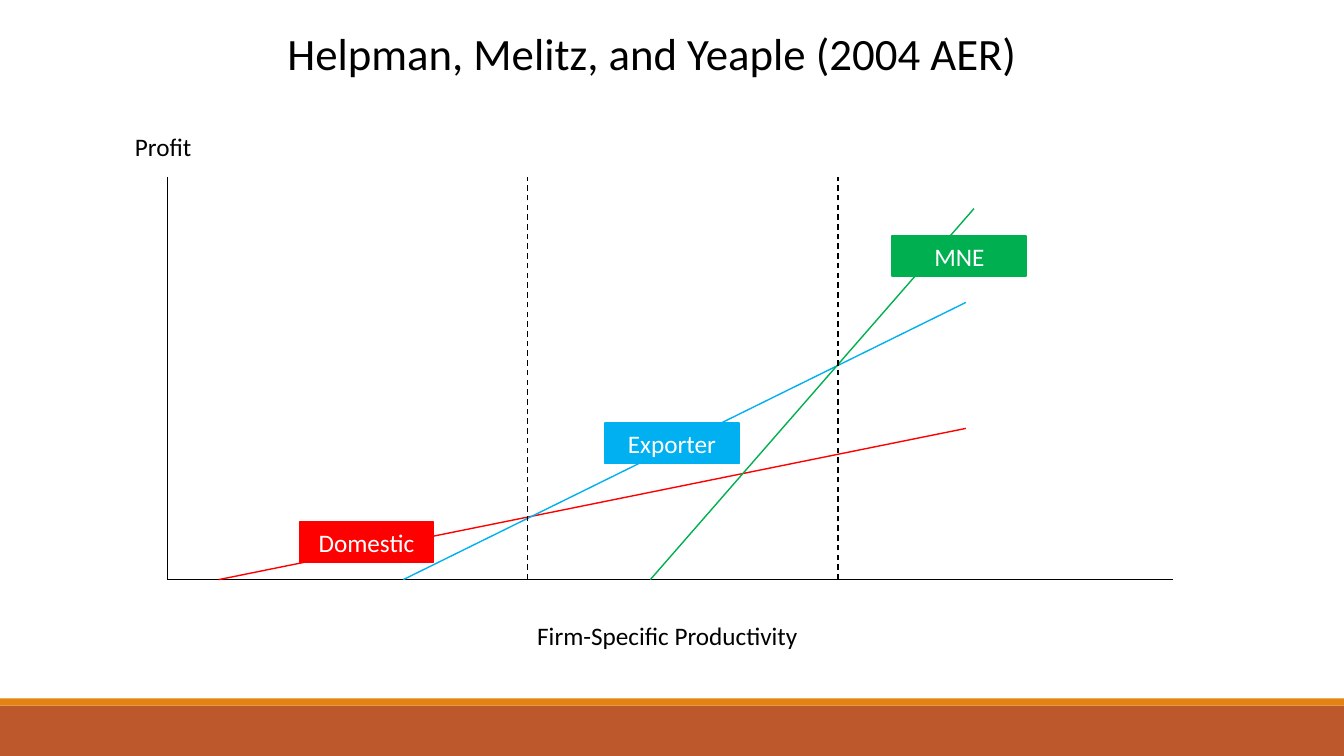
from pptx import Presentation
from pptx.dml.color import RGBColor
from pptx.enum.dml import MSO_LINE
from pptx.enum.shapes import MSO_CONNECTOR, MSO_SHAPE
from pptx.enum.text import MSO_ANCHOR, PP_ALIGN
from pptx.oxml.ns import qn
from pptx.util import Inches, Pt

FONT = "Calibri"
COLORS = {
    "black": "000000", "white": "FFFFFF", "red": "FF0000", "blue": "00B0F0",
    "green": "00B050", "rust": "BD582C", "orange": "E48312",
}
TITLE = "Helpman, Melitz, and Yeaple (2004 AER)"
LEFT, RIGHT, TOP, BASE = 1.66, 11.63, 1.76, 5.75  # plot area

BANDS = [("rust", 7, 0.5), ("orange", 6.93, 0.07)]  # colour, top, height
# name, colour, zero-profit productivity, line end, label corner
FIRMS = [
    ("Domestic", "red", 2.17, (9.58, 4.25), (2.97, 5.18)),
    ("Exporter", "blue", 4, (9.58, 3), (6, 4.2)),
    ("MNE", "green", 6.45, (9.66, 2.07), (8.85, 2.34)),
]
AXIS_LABELS = [
    ("Profit", 1.24, 1.25, 0.83),
    ("Firm-Specific Productivity", 5.23, 6.11, 2.83),
]
CUTOFFS = [5.23, 8.31]


def rgb(name):
    return RGBColor.from_string(COLORS[name])


def add_line(shapes, start, end, color="black", dashed=False):
    line = shapes.add_connector(
        MSO_CONNECTOR.STRAIGHT, *(Inches(v) for v in (*start, *end)))
    line.line.color.rgb = rgb(color)
    line.line.width = Pt(1)
    if dashed:
        line.line.dash_style = MSO_LINE.DASH
    sp_pr = line._element.spPr
    sp_pr.append(sp_pr.makeelement(qn("a:effectLst"), {}))


def add_rect(left, top, width, height, color):
    sp = s.shapes.add_shape(
        MSO_SHAPE.RECTANGLE, *(Inches(v) for v in (left, top, width, height)))
    sp.shadow.inherit = False
    sp.fill.solid()
    sp.fill.fore_color.rgb = rgb(color)
    sp.line.fill.background()
    return sp


def set_text(sp, text, size=18, color="black", align=PP_ALIGN.LEFT):
    tf = sp.text_frame
    tf.text = text
    tf.word_wrap = True
    tf.vertical_anchor = MSO_ANCHOR.TOP
    p = tf.paragraphs[0]
    p.alignment = align
    p.font.name = FONT
    p.font.size = Pt(size)
    p.font.color.rgb = rgb(color)


prs = Presentation()
prs.slide_width, prs.slide_height = Inches(13.33), Inches(7.5)
s = prs.slides.add_slide(prs.slide_layouts[5])

for color, top, height in BANDS:
    add_rect(0, top, 13.33, height, color)

axes = s.shapes.add_group_shape()
add_line(axes.shapes, (LEFT, TOP), (LEFT, BASE))
add_line(axes.shapes, (LEFT, BASE), (RIGHT, BASE))

for name, color, start, end, corner in FIRMS:
    add_line(s.shapes, (start, BASE), end, color)

for name, color, start, end, corner in FIRMS:
    label = add_rect(*corner, 1.33, 0.4, color)
    label.line.color.rgb = rgb(color)
    label.line.width = Pt(1.25)
    set_text(label, name, color="white", align=PP_ALIGN.CENTER)

for text, left, top, width in AXIS_LABELS:
    box = s.shapes.add_textbox(
        Inches(left), Inches(top), Inches(width), Inches(0.4))
    set_text(box, text)

for x in CUTOFFS:
    add_line(s.shapes, (x, BASE), (x, TOP), dashed=True)

title = s.shapes.title
title.left, title.top = Inches(2.75), Inches(0.2)
title.width, title.height = Inches(7.8), Inches(0.64)
set_text(title, TITLE, size=32)

prs.save("out.pptx")
